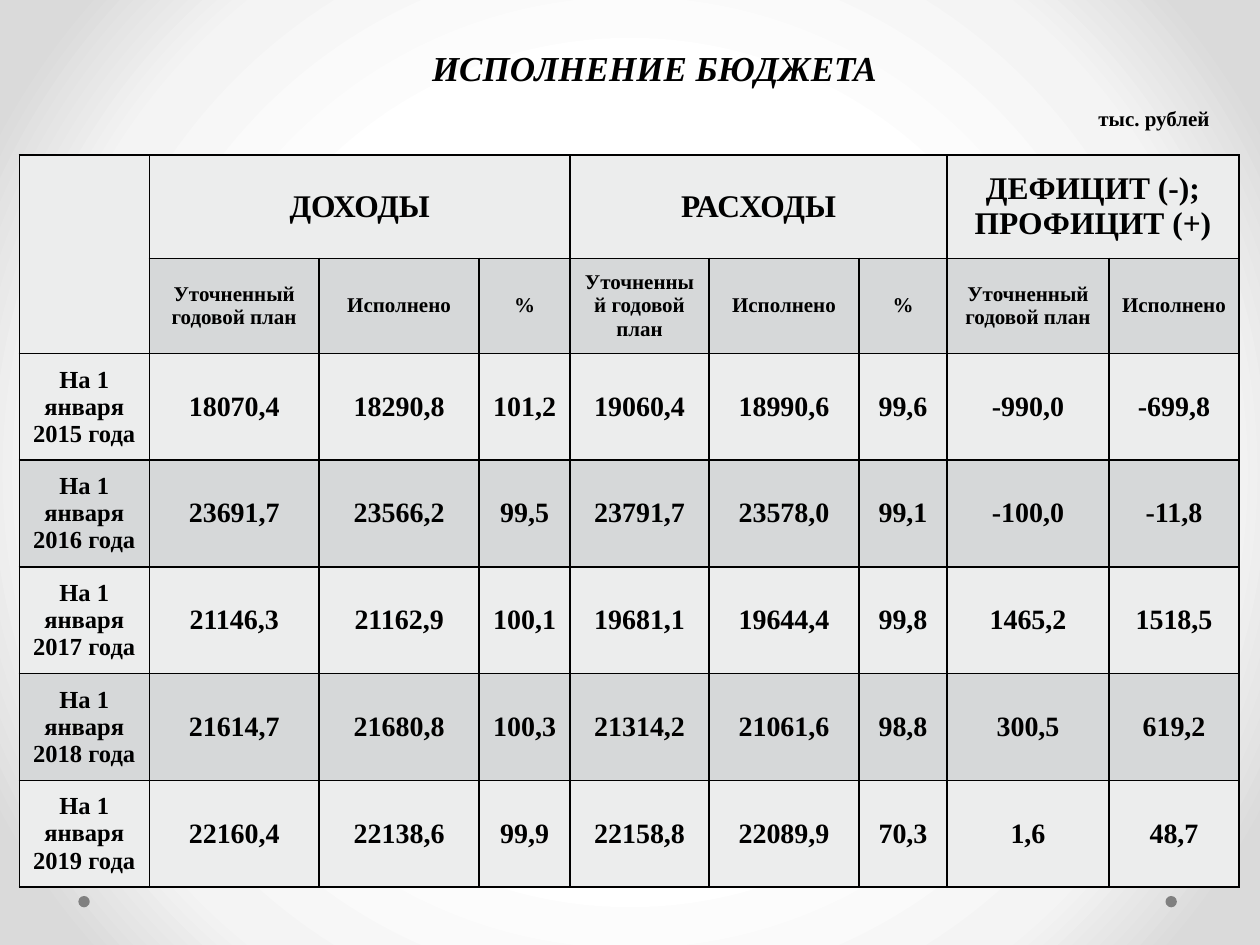
from lxml import etree
from pptx import Presentation
from pptx import util as u
from pptx.dml.color import RGBColor
from pptx.enum import shapes, text
from pptx.oxml import parse_xml
from pptx.oxml.ns import nsdecls, qn

BLACK = RGBColor(0x00, 0x00, 0x00)
GRAY = RGBColor(0x80, 0x80, 0x80)
LIGHT_BAND = RGBColor(0xEC, 0xED, 0xED)
DARK_BAND = RGBColor(0xD6, 0xD8, 0xD9)
GLOW = ((0, RGBColor(0xFF, 0xFF, 0xFF)), (50, RGBColor(0xFF, 0xFF, 0xFF)),
        (76, RGBColor(0xF4, 0xF4, 0xF4)), (92, RGBColor(0xDA, 0xDA, 0xDA)),
        (100, RGBColor(0xDA, 0xDA, 0xDA)))

PLAN, DONE, PERCENT = "Уточненный годовой план", "Исполнено", "%"
GROUPS = (
    ("ДОХОДЫ", (PLAN, DONE, PERCENT)),
    ("РАСХОДЫ", (PLAN, DONE, PERCENT)),
    ("ДЕФИЦИТ (-);\nПРОФИЦИТ (+)", (PLAN, DONE)),
)
BUDGET = {
    2015: "18070,4 18290,8 101,2 19060,4 18990,6 99,6 -990,0 -699,8",
    2016: "23691,7 23566,2 99,5 23791,7 23578,0 99,1 -100,0 -11,8",
    2017: "21146,3 21162,9 100,1 19681,1 19644,4 99,8 1465,2 1518,5",
    2018: "21614,7 21680,8 100,3 21314,2 21061,6 98,8 300,5 619,2",
    2019: "22160,4 22138,6 99,9 22158,8 22089,9 70,3 1,6 48,7",
}
COLUMN_WIDTHS = (74.3, 97.1, 91.4, 52, 79.4, 85.7, 50.3, 92.6, 74.3)
ROW_HEIGHTS = (59.1, 54.4) + (61,) * len(BUDGET)


class SlideBuilder:
    font_name = "Times New Roman"

    def __init__(self, slide):
        self.slide = slide

    def background(self, stops):
        fill = self.slide.background.fill
        fill.solid()
        solid = self.slide.element.find(".//" + qn("p:bgPr") + "/" + qn("a:solidFill"))
        marks = "".join(
            f'<a:gs pos="{position * 1000}"><a:srgbClr val="{color}"/></a:gs>'
            for position, color in stops)
        gradient = parse_xml(
            f'<a:gradFill {nsdecls("a")} rotWithShape="1"><a:gsLst>{marks}</a:gsLst>'
            '<a:path path="circle"><a:fillToRect l="50000" t="50000" r="50000" b="50000"/>'
            '</a:path></a:gradFill>')
        solid.getparent().replace(solid, gradient)

    def set_words(self, frame, words, size, align, italic=False):
        frame.text = words
        for paragraph in frame.paragraphs:
            paragraph.alignment = align
            font = paragraph.font
            font.name, font.size = self.font_name, u.Pt(size)
            font.bold, font.italic = True, italic
            font.color.rgb = BLACK

    def title(self, words, left, top, width, height):
        heading = self.slide.shapes.title
        heading.left, heading.top = u.Pt(left), u.Pt(top)
        heading.width, heading.height = u.Pt(width), u.Pt(height)
        frame = heading.text_frame
        frame.auto_size = text.MSO_AUTO_SIZE.NONE
        frame.vertical_anchor = text.MSO_ANCHOR.TOP
        self.set_words(frame, words, 20, text.PP_ALIGN.CENTER, italic=True)

    def label(self, words, left, top, width, height):
        box = self.slide.shapes.add_textbox(*map(u.Pt, (left, top, width, height)))
        box.text_frame.word_wrap = True
        self.set_words(box.text_frame, words, 12, text.PP_ALIGN.LEFT)

    def dot(self, left, top, size):
        oval = self.slide.shapes.add_shape(
            shapes.MSO_SHAPE.OVAL, *map(u.Pt, (left, top, size, size)))
        oval.shadow.inherit = False
        oval.fill.solid()
        oval.fill.fore_color.rgb = GRAY
        oval.line.fill.background()

    def table(self, left, top, widths, heights):
        frame = self.slide.shapes.add_table(
            len(heights), len(widths),
            *map(u.Pt, (left, top, sum(widths), sum(heights))))
        grid = frame.table
        grid.first_row = grid.horz_banding = False
        for column, width in zip(grid.columns, widths):
            column.width = u.Pt(width)
        for index, (row, height) in enumerate(zip(grid.rows, heights)):
            row.height = u.Pt(height)
            for cell in row.cells:
                cell.fill.solid()
                cell.fill.fore_color.rgb = DARK_BAND if index % 2 else LIGHT_BAND
                self.border(cell)
        return grid

    def border(self, cell):
        properties = cell._tc.get_or_add_tcPr()
        for index, side in enumerate(("lnL", "lnR", "lnT", "lnB")):
            edge = etree.Element(qn("a:" + side), w=str(u.Pt(1)))
            fill = etree.SubElement(edge, qn("a:solidFill"))
            etree.SubElement(fill, qn("a:srgbClr"), val=str(BLACK))
            properties.insert(index, edge)

    def cell(self, cell, words, size):
        cell.vertical_anchor = text.MSO_ANCHOR.MIDDLE
        self.set_words(cell.text_frame, words, size, text.PP_ALIGN.CENTER)


def main():
    deck = Presentation()
    deck.slide_width, deck.slide_height = u.Pt(720), u.Pt(540)
    page = SlideBuilder(deck.slides.add_slide(deck.slide_layouts[5]))
    page.background(GLOW)
    for left in (44.8, 666):
        page.dot(left, 512, 6.5)

    grid = page.table(11, 88.5, COLUMN_WIDTHS, ROW_HEIGHTS)
    grid.cell(0, 0).merge(grid.cell(1, 0))
    first = 1
    for group, measures in GROUPS:
        grid.cell(0, first).merge(grid.cell(0, first + len(measures) - 1))
        page.cell(grid.cell(0, first), group, 18)
        for column, measure in enumerate(measures, first):
            page.cell(grid.cell(1, column), measure, 12)
        first += len(measures)
    for row, (year, amounts) in enumerate(BUDGET.items(), 2):
        page.cell(grid.cell(row, 0), f"На 1 января {year} года", 14)
        for column, amount in enumerate(amounts.split(), 1):
            page.cell(grid.cell(row, column), amount, 16)

    page.title("ИСПОЛНЕНИЕ БЮДЖЕТА", 224, 23, 300, 32)
    page.label("тыс. рублей", 620.6, 57, 85, 22)
    deck.save("out.pptx")


if __name__ == "__main__":
    main()
